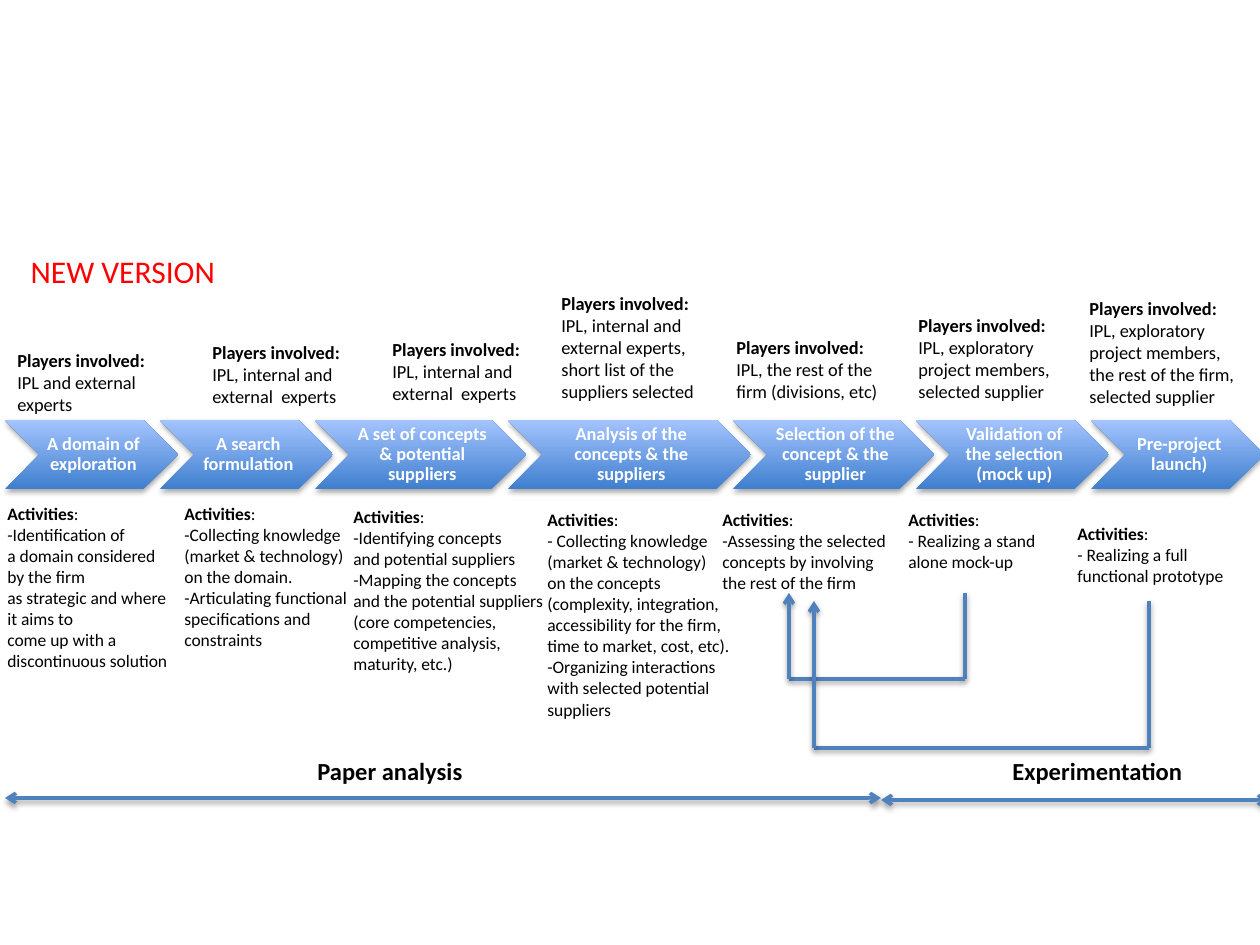
from lxml import etree
from pptx import Presentation, util as u
from pptx.dml.color import RGBColor
from pptx.enum import shapes, text
from pptx.oxml import ns

PX = 914400 // 126
FONT = "Calibri"
HEX = {"dark": "3F7FCE", "light": "A4C4FF", "line": "4F81BD",
       "text": "000000", "label": "FFFFFF", "title": "FF0000"}

# Chevron width and label of each stage
STAGES = [
    (173, "A domain of exploration"),
    (173, "A search formulation"),
    (211, "A set of concepts & potential suppliers"),
    (243, "Analysis of the concepts & the suppliers"),
    (201, "Selection of the concept & the supplier"),
    (193, "Validation of the selection (mock up)"),
    (173, "Pre-project launch)"),
]

# Left, top, width and lines of each note
PLAYERS = [
    (5, 343, 156, ["IPL and external", "experts"]),
    (200, 335, 159, ["IPL, internal and", "external  experts"]),
    (380, 332, 159, ["IPL, internal and", "external  experts"]),
    (549, 286, 161, ["IPL, internal and", "external experts,",
                     "short list of the", "suppliers selected"]),
    (724, 330, 169, ["IPL, the rest of the", "firm (divisions, etc)"]),
    (906, 308, 160, ["IPL, exploratory", "project members,",
                     "selected supplier"]),
    (1077, 291, 173, ["IPL, exploratory", "project members,",
                      "the rest of the firm,", "selected supplier"]),
]
ACTS = [
    (-5, 497, 190, ["-Identification of", "a domain considered", "by the firm",
                    "as strategic and where", "it aims to",
                    "come up with a", "discontinuous solution"]),
    (172, 497, 191, ["-Collecting knowledge", "(market & technology)",
                     "on the domain.", "-Articulating functional",
                     "specifications and", "constraints"]),
    (341, 500, 220, ["-Identifying concepts", "and potential suppliers",
                     "-Mapping the concepts", "and the potential suppliers",
                     "(core competencies,", "competitive analysis,",
                     "maturity, etc.)"]),
    (535, 503, 213, ["- Collecting knowledge", "(market & technology)",
                     "on the concepts", "(complexity, integration,",
                     "accessibility for the firm,",
                     "time to market, cost, etc).",
                     "-Organizing interactions", "with selected potential",
                     "suppliers"]),
    (710, 503, 193, ["-Assessing the selected", "concepts by involving",
                     "the rest of the firm"]),
    (896, 503, 156, ["- Realizing a stand", "alone mock-up"]),
    (1065, 517, 175, ["- Realizing a full", "functional prototype"]),
]


def px(*nums):
    return [u.Emu(n * PX) for n in nums]


def color(name):
    return RGBColor.from_string(HEX[name])


def style(font, size, name, bold=False):
    font.name, font.size, font.bold = FONT, u.Pt(size), bold
    font.color.rgb = color(name)


def shade(props, alpha, dist):
    """Add a soft drop shadow; call after fill and line are set."""
    fx = etree.SubElement(props, ns.qn("a:effectLst"))
    drop = etree.SubElement(fx, ns.qn("a:outerShdw"), blurRad="40000",
                            dist=str(dist), dir="5400000", rotWithShape="0")
    tint = etree.SubElement(drop, ns.qn("a:srgbClr"), val="000000")
    etree.SubElement(tint, ns.qn("a:alpha"), val=str(alpha * 1000))


def add_title(slide, words):
    box = slide.shapes.title
    box.left, box.top, box.width, box.height = px(18, 246, 212, 50)
    frame = box.text_frame
    frame.text = words
    frame.vertical_anchor = text.MSO_ANCHOR.TOP
    frame.auto_size = text.MSO_AUTO_SIZE.NONE
    para = frame.paragraphs[0]
    para.alignment = text.PP_ALIGN.LEFT
    style(para.font, 18, "title")


def add_stage(slide, left, width, label):
    shape = slide.shapes.add_shape(shapes.MSO_SHAPE.CHEVRON,
                                   *px(left, 420, width, 69))
    shape.fill.gradient()
    shape.fill.gradient_angle = 90
    for stop, name in zip(shape.fill.gradient_stops, ("dark", "light")):
        stop.color.rgb = color(name)
    shape.line.fill.background()
    shade(shape._element.spPr, 35, 23000)
    frame = shape.text_frame
    frame.word_wrap = True
    frame.vertical_anchor = text.MSO_ANCHOR.MIDDLE
    frame.margin_left = u.Inches(0.05)
    frame.margin_right = frame.margin_top = frame.margin_bottom = u.Inches(0.02)
    frame.text = label
    para = frame.paragraphs[0]
    para.alignment = text.PP_ALIGN.CENTER
    para.line_spacing = 0.9
    style(para.font, 10.5, "label", True)


def add_note(slide, left, top, width, size, head, tail="", lines=()):
    """Add a bold heading, its plain tail and plain lines below."""
    high = round(size * 2.1 * (1 + len(lines))) + 13
    box = slide.shapes.add_textbox(*px(left, top, width, high))
    frame = box.text_frame
    frame.word_wrap = False
    frame.auto_size = text.MSO_AUTO_SIZE.SHAPE_TO_FIT_TEXT
    para = frame.paragraphs[0]
    style(para.font, size, "text", True)
    for words, bold in ((head, True), (tail, False)):
        if words:
            run = para.add_run()
            run.text = words
            style(run.font, size, "text", bold)
    for line in lines:
        para = frame.add_paragraph()
        para.text = line
        style(para.font, size, "text")


def add_line(slide, start, end, *heads):
    """Join two points; heads names the arrow ends, headEnd at the start."""
    line = slide.shapes.add_connector(shapes.MSO_CONNECTOR.STRAIGHT,
                                      *px(*start, *end))
    line.line.color.rgb = color("line")
    line.line.width = u.Pt(2)
    for head in heads:
        etree.SubElement(line.line._get_or_add_ln(), ns.qn("a:" + head),
                         type="arrow")
    shade(line._element.spPr, 38, 20000)


def add_loop(slide, right, left, top, low):
    """Lead back from a later stage to an earlier one."""
    add_line(slide, (right, top), (right, low))
    add_line(slide, (right, low), (left, low))
    add_line(slide, (left, low), (left, top), "tailEnd")


def main():
    deck = Presentation()
    deck.slide_width, deck.slide_height = px(1260, 945)
    slide = deck.slides.add_slide(deck.slide_layouts[5])
    add_title(slide, "NEW VERSION")

    left, lap = 5, 18
    for width, label in STAGES:
        add_stage(slide, left, width, label)
        left += width - lap

    for x, y, width, lines in PLAYERS:
        add_note(slide, x, y, width, 10.5, "Players involved:", lines=lines)
    for x, y, width, lines in ACTS:
        add_note(slide, x, y, width, 10, "Activities", ":", lines)

    add_loop(slide, 965, 789, 593, 679)
    add_loop(slide, 1149, 814, 601, 748)

    add_note(slide, 305, 750, 173, 14, "Paper analysis")
    add_note(slide, 1000, 750, 197, 14, "Experimentation")
    add_line(slide, (5, 798), (881, 798), "headEnd", "tailEnd")
    add_line(slide, (881, 800), (1269, 800), "headEnd", "tailEnd")
    deck.save("out.pptx")


if __name__ == "__main__":
    main()
